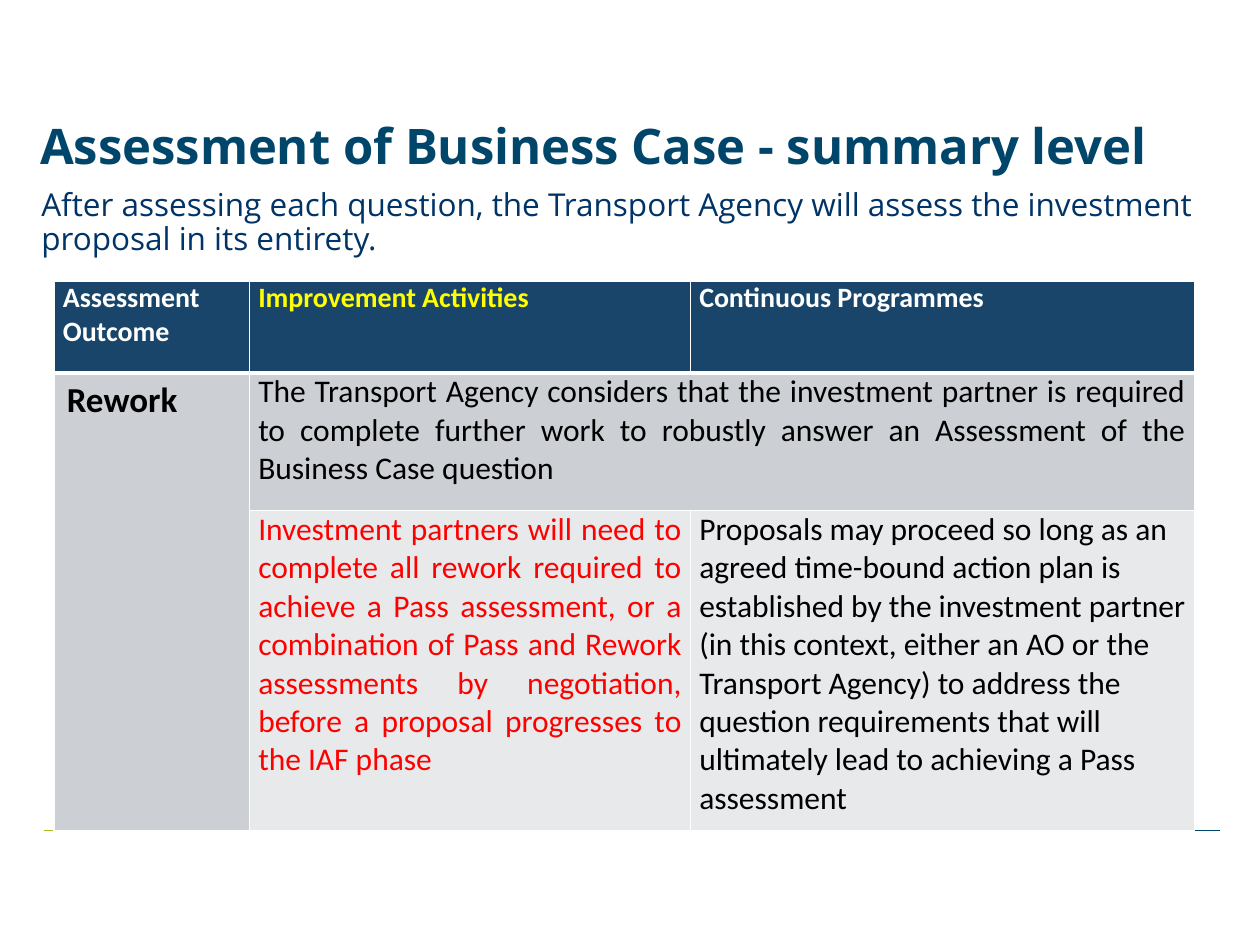
from dataclasses import dataclass

import lxml.etree
import pptx
import pptx.dml.color
import pptx.enum.shapes
import pptx.enum.text
import pptx.oxml.ns
import pptx.util

ALIGN = pptx.enum.text.PP_ALIGN
ANCHOR = pptx.enum.text.MSO_ANCHOR
COLUMNS, ROWS = 100, 75  # page grid
SLIDE_WIDTH, SLIDE_HEIGHT = pptx.util.Inches(10), pptx.util.Inches(7.5)


@dataclass(frozen=True)
class Theme:
    heading_font: str = "Open Sans"
    table_font: str = "Calibri"
    title_size: int = 28
    outcome_size: int = 20
    body_size: int = 18
    header_size: int = 16
    teal: str = "00456A"
    lime: str = "AFBD21"
    navy: str = "003366"
    header_fill: str = "19456B"
    dark_band: str = "CCCFD4"
    light_band: str = "E8E9EB"
    white: str = "FFFFFF"
    black: str = "000000"
    yellow: str = "FFFF00"
    red: str = "FF0000"


THEME = Theme()


def across(columns):
    return round(SLIDE_WIDTH * columns / COLUMNS)


def down(rows):
    return round(SLIDE_HEIGHT * rows / ROWS)


def rgb(value):
    return pptx.dml.color.RGBColor.from_string(value)


def write(para, text, font, size, color, bold=False):
    para.text = text
    for span in para.runs:
        span.font.name = font
        span.font.size = pptx.util.Pt(size)
        span.font.bold = bold
        span.font.color.rgb = rgb(color)


def add_text(page, left, top, width, height, anchor, text, size, color, bold=False):
    box = page.shapes.add_textbox(across(left), down(top), across(width), down(height))
    box.text_frame.word_wrap = True
    box.text_frame.vertical_anchor = anchor
    para = box.text_frame.paragraphs[0]
    para.line_spacing = 0.9
    write(para, text, THEME.heading_font, size, color, bold)


def add_rule(page, start, end, row, color):
    rule = page.shapes.add_connector(
        pptx.enum.shapes.MSO_CONNECTOR.STRAIGHT,
        across(start), down(row), across(end), down(row))
    rule.line.color.rgb = rgb(color)
    rule.line.width = pptx.util.Pt(0.75)
    lxml.etree.SubElement(rule._element.spPr, pptx.oxml.ns.qn("a:effectLst"))


def set_borders(cell, top, bottom):
    properties = cell._tc.get_or_add_tcPr()
    widths = {"lnL": 1, "lnR": 1, "lnT": top, "lnB": bottom}
    for position, (side, width) in enumerate(widths.items()):
        border = lxml.etree.Element(
            pptx.oxml.ns.qn(f"a:{side}"), w=str(pptx.util.Pt(width)))
        fill = lxml.etree.SubElement(border, pptx.oxml.ns.qn("a:solidFill"))
        lxml.etree.SubElement(fill, pptx.oxml.ns.qn("a:srgbClr"), val=THEME.white)
        properties.insert(position, border)


def fill_cell(cell, text, size, color, bold=False, align=ALIGN.LEFT, tight=True):
    if tight:
        cell.margin_left = cell.margin_right = across(0.7)
        cell.margin_top = cell.margin_bottom = 0
    para = cell.text_frame.paragraphs[0]
    write(para, text, THEME.table_font, size, color, bold)
    para.alignment = align


def add_outcome_table(page):
    widths, heights = (15.5, 35, 40), (7.3, 10.9, 25.4)
    table = page.shapes.add_table(
        len(heights), len(widths), across(4.3), down(22.3),
        across(sum(widths)), down(sum(heights))).table
    for column, width in zip(table.columns, widths):
        column.width = across(width)
    for row, height in zip(table.rows, heights):
        row.height = down(height)

    # Bands and borders, with a heavy line under the header
    fills = (THEME.header_fill, THEME.dark_band, THEME.light_band)
    for index, (row, color) in enumerate(zip(table.rows, fills)):
        for cell in row.cells:
            cell.fill.solid()
            cell.fill.fore_color.rgb = rgb(color)
            set_borders(cell, 3 if index == 1 else 1, 3 if index == 0 else 1)
    table.cell(1, 0).merge(table.cell(2, 0))
    table.cell(1, 1).merge(table.cell(1, 2))

    # Header
    headers = (("Assessment Outcome", THEME.white),
               ("Improvement Activities", THEME.yellow),
               ("Continuous Programmes", THEME.white))
    for column, (text, color) in enumerate(headers):
        fill_cell(table.cell(0, column), text, THEME.header_size, color, bold=True)

    # Outcome and its meaning for each kind of work
    fill_cell(table.cell(1, 0), "Rework", THEME.outcome_size, THEME.black,
              bold=True, align=ALIGN.JUSTIFY, tight=False)
    fill_cell(table.cell(1, 1),
              "The Transport Agency considers that the investment partner is required "
              "to complete further work to robustly answer an Assessment of the "
              "Business Case question",
              THEME.body_size, THEME.black, align=ALIGN.JUSTIFY)
    fill_cell(table.cell(2, 1),
              "Investment partners will need to complete all rework required to "
              "achieve a Pass assessment, or a combination of Pass and Rework "
              "assessments by negotiation, before a proposal progresses to the IAF phase",
              THEME.body_size, THEME.red, align=ALIGN.JUSTIFY)
    fill_cell(table.cell(2, 2),
              "Proposals may proceed so long as an agreed time-bound action plan is "
              "established by the investment partner (in this context, either an AO or "
              "the Transport Agency) to address the question requirements that will "
              "ultimately lead to achieving a Pass assessment",
              THEME.body_size, THEME.black)


def main():
    deck = pptx.Presentation()
    deck.slide_width, deck.slide_height = SLIDE_WIDTH, SLIDE_HEIGHT
    page = deck.slides.add_slide(deck.slide_layouts[6])

    # Footer rules
    add_rule(page, 3.5, 19.5, 65.9, THEME.lime)
    add_rule(page, 20.3, 96.8, 65.9, THEME.teal)

    # Title and introduction
    add_text(page, 2.2, 7.5, 94.4, 6.9, ANCHOR.BOTTOM,
             "Assessment of Business Case - summary level",
             THEME.title_size, THEME.teal, bold=True)
    add_text(page, 2.3, 14.5, 94.3, 8, ANCHOR.TOP,
             "After assessing each question, the Transport Agency will assess the "
             "investment proposal in its entirety.",
             THEME.body_size, THEME.navy)

    add_outcome_table(page)
    deck.save("out.pptx")


if __name__ == "__main__":
    main()
